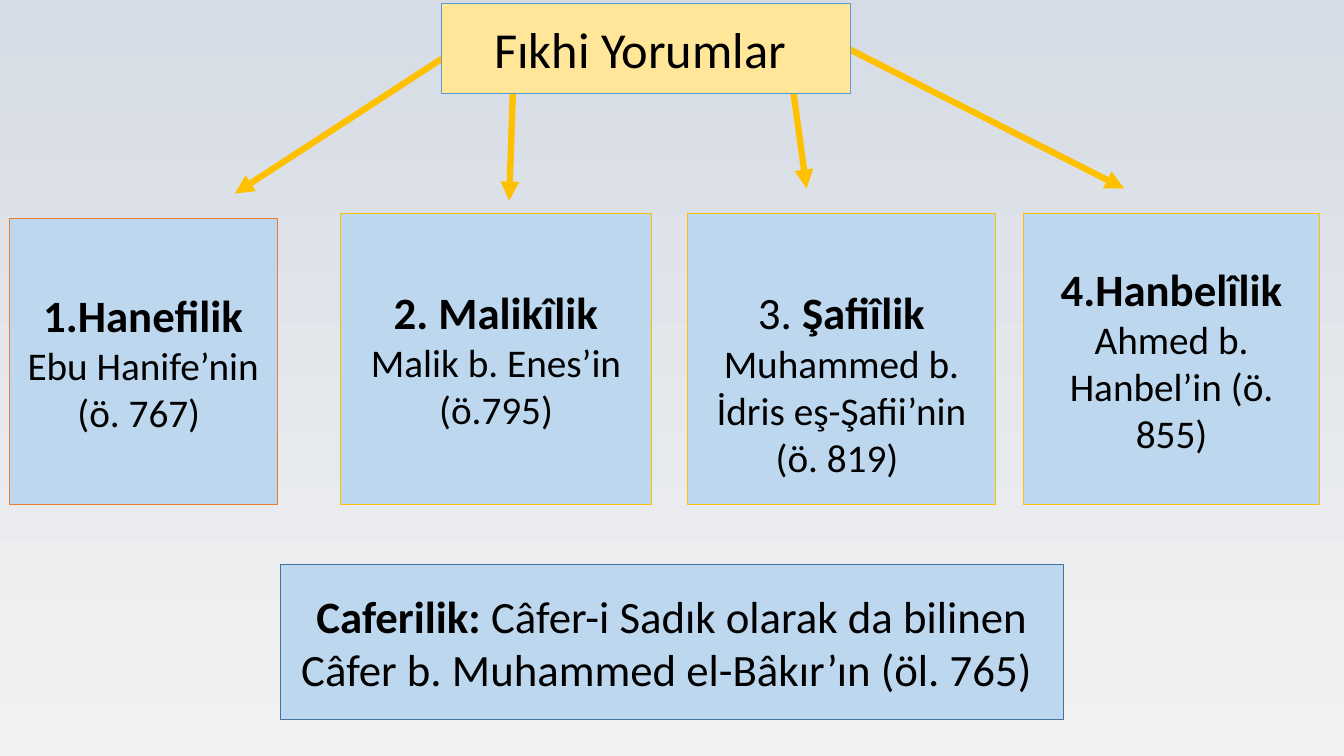
from lxml import etree
from pptx import Presentation
from pptx.dml.color import RGBColor
from pptx.enum import shapes, text
from pptx.oxml.ns import qn
from pptx.util import Inches, Pt

# Content: a paragraph is a list of (text, size name, bold)
TITLE = [[("Fıkhi Yorumlar ", "title", False)]]
SCHOOLS = [  # left, top, width, line colour, top inset, paragraphs
    (0.09, 2.17, 2.66, "orange", 0.05,
     [[("1.Hanefilik", "head", True)], [("Ebu Hanife’nin (ö. 767) ", "body", False)]]),
    (3.38, 2.12, 3.08, "gold", 0.05,
     [[("2. Malikîlik", "head", True)], [("Malik b. Enes’in (ö.795)", "body", False)]]),
    (6.82, 2.12, 3.05, "gold", 0.52,
     [[("3. ", "head", False), ("Şafiîlik", "head", True)],
      [("Muhammed b. İdris eş-Şafii’nin (ö. 819) ", "body", False)]]),
    (10.15, 2.12, 2.94, "gold", 0.05,
     [[("4.Hanbelîlik", "head", True)], [("Ahmed b. Hanbel’in (ö. 855)", "body", False)]]),
]
CAFERI = [[("Caferilik: ", "head", True),
           ("Câfer-i Sadık olarak da bilinen Câfer b. Muhammed el-Bâkır’ın (öl. 765) ",
            "head", False)]]
ARROWS = [  # from x, from y, to x, to y
    (4.54, 0.48, 2.33, 1.92),
    (5.09, 0.84, 5.05, 1.99),
    (7.87, 0.92, 8, 1.87),
    (8.19, 0.37, 11.15, 1.87),
]
BASE = 5  # shared bottom edge of the school boxes

THEME = {
    "font": "Calibri",
    "size": {"title": 36, "head": 32, "body": 28},
    "color": {"ink": "000000", "sky": "BDD7EE", "cream": "FFE699", "gold": "FFC000",
              "orange": "ED7D31", "blue": "5B9BD5", "navy": "43739E",
              "top": "D6DCE5", "base": "F2F2F2"},
}


def color(name):
    return RGBColor.from_string(THEME["color"][name])


def write(frame, paras, inset=0.05, align=text.PP_ALIGN.CENTER):
    frame.word_wrap = True
    frame.vertical_anchor = text.MSO_ANCHOR.MIDDLE
    frame.margin_top = Inches(inset)
    for i, runs in enumerate(paras):
        para = frame.paragraphs[0] if i == 0 else frame.add_paragraph()
        para.alignment = align
        for words, size, bold in runs:
            run = para.add_run()
            run.text = words
            run.font.name = THEME["font"]
            run.font.size = Pt(THEME["size"][size])
            run.font.bold = bold
            run.font.color.rgb = color("ink")


def add_box(slide, place, paras, fill="sky", line="gold", weight=0.5, inset=0.05):
    box = slide.shapes.add_shape(shapes.MSO_SHAPE.RECTANGLE, *map(Inches, place))
    box.shadow.inherit = False
    box.fill.solid()
    box.fill.fore_color.rgb = color(fill)
    box.line.color.rgb = color(line)
    box.line.width = Pt(weight)
    write(box.text_frame, paras, inset=inset)


def add_arrow(slide, ends):
    arrow = slide.shapes.add_connector(shapes.MSO_CONNECTOR.STRAIGHT, *map(Inches, ends))
    arrow.line.color.rgb = color("gold")
    arrow.line.width = Pt(4.5)
    etree.SubElement(arrow.line._get_or_add_ln(), qn("a:tailEnd"), type="triangle")
    etree.SubElement(arrow._element.spPr, qn("a:effectLst"))


def main():
    deck = Presentation()
    deck.slide_width, deck.slide_height = Inches(13.33), Inches(7.5)
    slide = deck.slides.add_slide(deck.slide_layouts[6])

    # Background, running from top to bottom
    back = slide.background.fill
    back.gradient()
    back.gradient_angle = 270
    for stop, name, spot in zip(back.gradient_stops, ("top", "base"), (0, 1)):
        stop.color.rgb = color(name)
        stop.position = spot

    # Four schools
    for left, top, width, line, inset, paras in SCHOOLS:
        add_box(slide, (left, top, width, BASE - top), paras, line=line, inset=inset)

    # Arrows, then the title over their ends
    for ends in ARROWS:
        add_arrow(slide, ends)
    add_box(slide, (4.38, 0.03, 4.05, 0.9), TITLE, fill="cream", line="blue")

    # Fifth school
    add_box(slide, (2.78, 5.6, 7.77, 1.54), CAFERI, line="navy", weight=1)

    deck.save("out.pptx")


if __name__ == "__main__":
    main()
